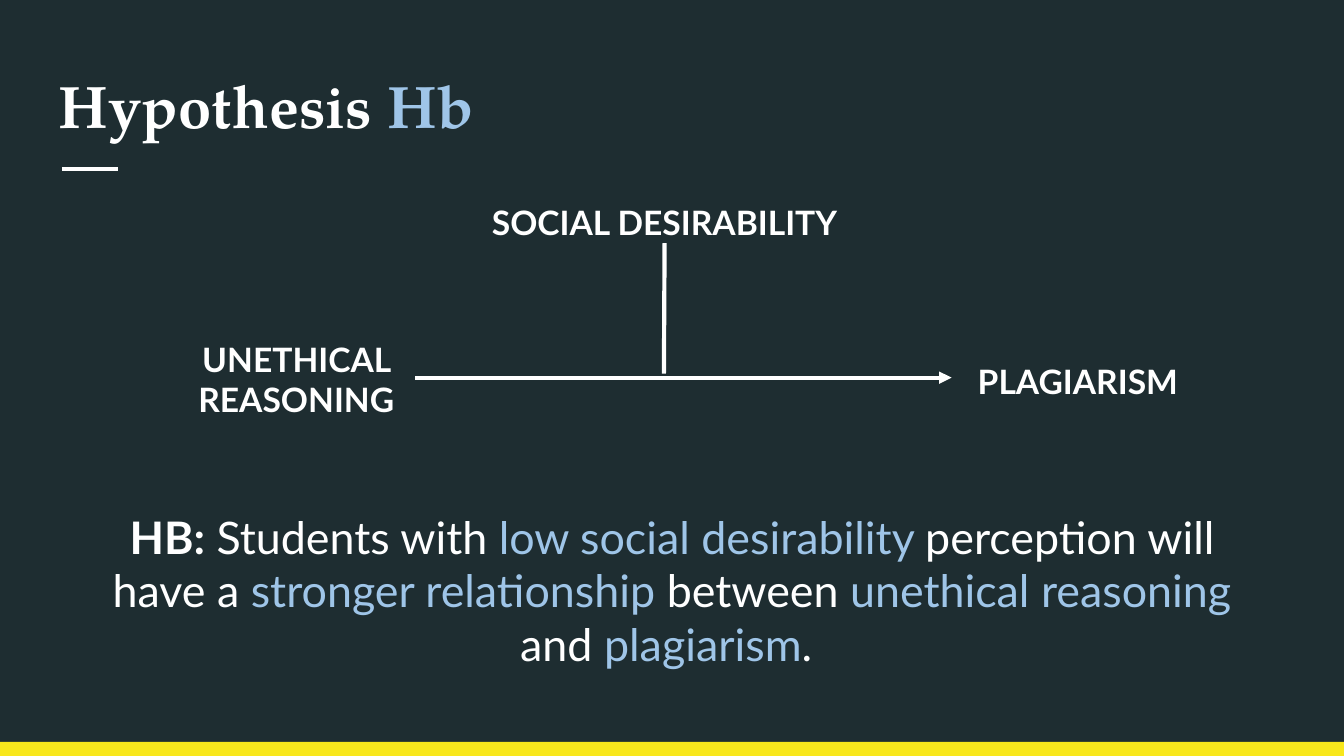
import pptx
import pptx.util
import pptx.dml.color
import pptx.enum.shapes
import pptx.enum.text
import pptx.oxml
import pptx.oxml.ns

Inches = pptx.util.Inches
ALIGN = pptx.enum.text.PP_ALIGN
WHITE, SKY, YELLOW, NIGHT = "FFFFFF", "9FC5E8", "F8E71C", "1E2D31"


def color(hex_code):
    return pptx.dml.color.RGBColor.from_string(hex_code)


def add_text(slide, box, runs, size, font="Lato", align=ALIGN.CENTER):
    label = slide.shapes.add_textbox(*map(Inches, box))
    frame = label.text_frame
    frame.word_wrap = True
    frame.margin_left = frame.margin_right = Inches(0.1)
    frame.margin_top = frame.margin_bottom = Inches(0.1)
    paragraph = frame.paragraphs[0]
    paragraph.alignment = align
    for words, hex_code, bold in runs:
        run = paragraph.add_run()
        run.text = words
        run.font.name = font
        run.font.size = pptx.util.Pt(size)
        run.font.bold = bold
        run.font.color.rgb = color(hex_code)
    return label


def add_line(slide, start, end, arrow=False):
    line = slide.shapes.add_connector(
        pptx.enum.shapes.MSO_CONNECTOR.STRAIGHT, *map(Inches, start + end))
    line.line.color.rgb = color(WHITE)
    line.line.width = pptx.util.Pt(2.25)
    properties = line._element.spPr
    namespace = pptx.oxml.ns.nsdecls("a")
    if arrow:
        properties.get_or_add_ln().append(
            pptx.oxml.parse_xml(f'<a:tailEnd {namespace} type="triangle"/>'))
    properties.append(pptx.oxml.parse_xml(f'<a:effectLst {namespace}/>'))
    return line


def add_footer_bar(slide, box):
    bar = slide.shapes.add_shape(
        pptx.enum.shapes.MSO_SHAPE.RECTANGLE, *map(Inches, box))
    bar.shadow.inherit = False
    bar.fill.solid()
    bar.fill.fore_color.rgb = color(YELLOW)
    bar.line.fill.background()


def add_heading(slide, box):
    left, top, width, height = box
    add_text(slide, (left, top, width, 0.71),
             [("Hypothesis", WHITE, True), (" Hb", SKY, True)],
             32, "TeX Gyre Pagella", ALIGN.LEFT)
    rule_left, rule_top = left + 0.12, top + height
    add_line(slide, (rule_left, rule_top), (rule_left + 0.42, rule_top))


def add_moderation_diagram(slide, box):
    left, top, width, height = box
    axis = top + height - 0.39
    moderator = add_text(slide, (left + 1.6, top, 4.05, 0.45),
                         [("SOCIAL DESIRABILITY", WHITE, True)], 18)
    moderator_paragraph = moderator.text_frame.paragraphs[0]
    moderator_paragraph.line_spacing = 1.15
    moderator_paragraph.space_after = pptx.util.Pt(16)
    predictor = add_text(slide, (left, axis - 0.39, 1.77, 0.78),
                         [("UNETHICAL REASONING", WHITE, True)], 18)
    outcome = add_text(slide, (left + width - 1.88, axis - 0.45 / 2, 1.88, 0.45),
                       [("PLAGIARISM", WHITE, True)], 18)

    effect = add_line(slide, (left + 1.77, axis),
                      (left + width - 1.88, axis), arrow=True)
    effect.begin_connect(predictor, 3)
    effect.end_connect(outcome, 1)
    moderation = add_line(slide, (left + 3.63, top + 0.45),
                          (left + 3.62, axis - 0.03))
    moderation.begin_connect(moderator, 2)


def add_statement(slide, box):
    phrases = [
        (" Students with ", WHITE), ("low social desirability ", SKY),
        ("perception will have a ", WHITE), ("stronger relationship", SKY),
        (" between ", WHITE), ("unethical reasoning ", SKY),
        ("and ", WHITE), ("plagiarism", SKY), (". ", WHITE),
    ]
    runs = [("HB:", WHITE, True)]
    runs += [(words, hex_code, False) for words, hex_code in phrases]
    add_text(slide, box, runs, 24)


def main():
    deck = pptx.Presentation()
    deck.slide_width = Inches(10)
    deck.slide_height = deck.slide_width * 9 // 16
    slide = deck.slides.add_slide(deck.slide_layouts[6])
    slide.background.fill.solid()
    slide.background.fill.fore_color.rgb = color(NIGHT)
    add_footer_bar(slide, (0, 5.52, 10, 0.11))
    add_heading(slide, (0.34, 0.41, 9.32, 0.85))
    add_moderation_diagram(slide, (1.32, 1.36, 7.64, 1.84))
    add_statement(slide, (0.66, 3.69, 8.68, 0.86))
    deck.save("out.pptx")


if __name__ == "__main__":
    main()
